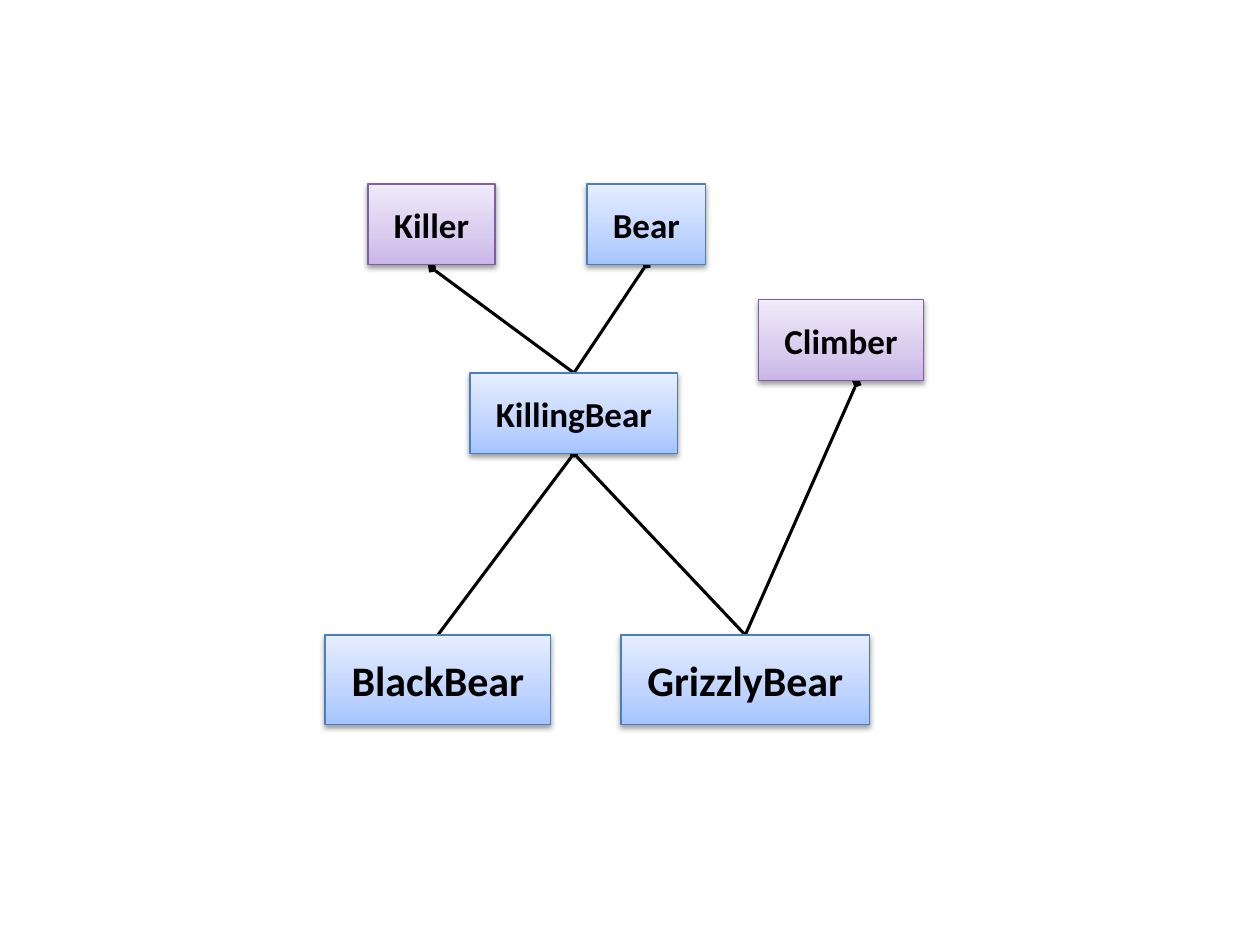
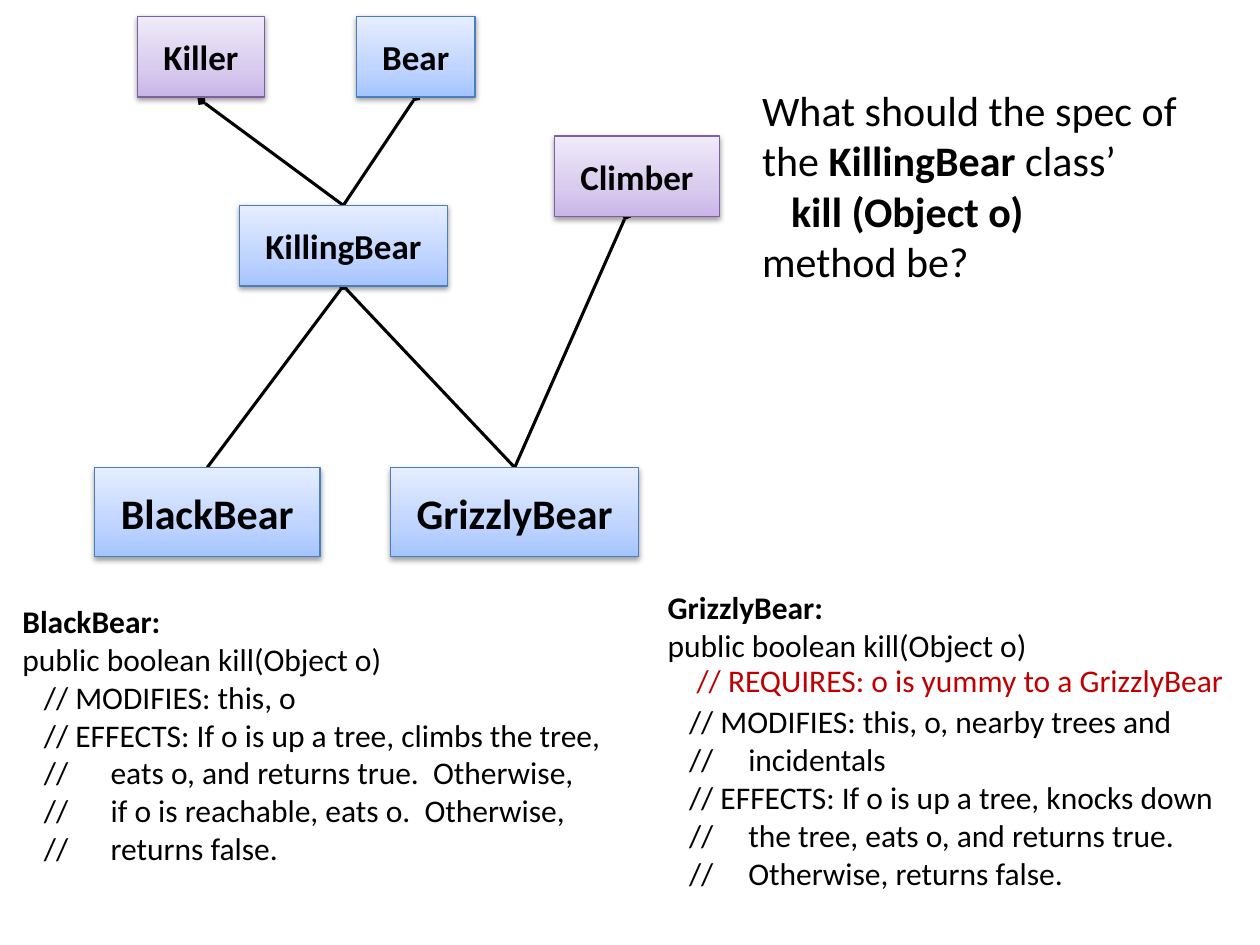
import pptx
import pptx.util
import pptx.dml.color
import pptx.enum.shapes
import pptx.enum.text
import pptx.oxml
import pptx.oxml.ns

HUES = {"ink": "000000", "alert": "C00000"}
# Line colour, then gradient stops from bottom to top
TINTS = {
    "class": ("4B7EBC", {0: "A4C4FF", 35: "BFD4FF", 100: "E6EEFF"}),
    "trait": ("7D60A0", {0: "C9B5E8", 35: "D8CBEE", 100: "F0EAF9"}),
}
FACE = "Calibri"
COLS, ROWS = 100, 75  # slide grid of square cells
CELL = pptx.util.Inches(0.1)
NS = pptx.oxml.ns.nsdecls("a")

# name: (left, top, width, height, tint, text size), in cells from the tree's corner
NODES = {
    "Killer": (3.4, 0, 10.1, 6.4, "trait", 20),
    "BlackBear": (0, 35.8, 17.9, 7.1, "class", 24),
    "GrizzlyBear": (23.5, 35.8, 19.7, 7.1, "class", 24),
    "Climber": (34.4, 9.2, 13.1, 6.4, "trait", 20),
    "Bear": (20.8, 0, 9.4, 6.4, "class", 20),
    "KillingBear": (11.5, 15, 16.5, 6.4, "class", 20),
}
LINKS = [
    ("Killer", "KillingBear"),
    ("KillingBear", "GrizzlyBear"),
    ("Climber", "GrizzlyBear"),
    ("KillingBear", "BlackBear"),
    ("Bear", "KillingBear"),
]
# Link starts that sit off the middle of a node's lower edge
FEET = {"Killer": (8.5, 6.7), "Climber": (42.2, 15.8)}


def cells(*nums):
    return [round(n * CELL) for n in nums]


def style(para, size, hue="ink", bold=None):
    font = para.font
    font.name, font.size, font.bold = FACE, pptx.util.Pt(size), bold
    font.color.rgb = pptx.dml.color.RGBColor.from_string(HUES[hue])


def link(slide, start, end):
    """Line with a diamond at its start."""
    kind = pptx.enum.shapes.MSO_CONNECTOR.STRAIGHT
    line = slide.shapes.add_connector(kind, *cells(*start, *end))
    line.line.width = pptx.util.Pt(1.75)
    line.line.color.rgb = pptx.dml.color.RGBColor.from_string(HUES["ink"])
    line.line._get_or_add_ln().append(
        pptx.oxml.parse_xml(f'<a:headEnd {NS} type="diamond"/>'))
    line._element.spPr.append(pptx.oxml.parse_xml(f"<a:effectLst {NS}/>"))


def node(slide, name, box, tint, size):
    """Shaded box with a type name."""
    kind = pptx.enum.shapes.MSO_SHAPE.RECTANGLE
    shape = slide.shapes.add_shape(kind, *cells(*box))
    edge, stops = TINTS[tint]
    shape.line.color.rgb = pptx.dml.color.RGBColor.from_string(edge)
    shape.line.width = pptx.util.Pt(0.75)

    # Gradient fill goes right after the geometry
    marks = "".join(f'<a:gs pos="{pos * 1000}"><a:srgbClr val="{hue}"/></a:gs>'
                    for pos, hue in stops.items())
    props = shape._element.spPr
    props.insert(2, pptx.oxml.parse_xml(
        f'<a:gradFill {NS} rotWithShape="1"><a:gsLst>{marks}</a:gsLst>'
        '<a:lin ang="16200000" scaled="0"/></a:gradFill>'))

    # Soft shadow below
    shape.shadow.inherit = False
    props.find(pptx.oxml.ns.qn("a:effectLst")).append(pptx.oxml.parse_xml(
        f'<a:outerShdw {NS} blurRad="40000" dist="20000" dir="5400000" rotWithShape="0">'
        f'<a:srgbClr val="{HUES["ink"]}"><a:alpha val="38000"/></a:srgbClr></a:outerShdw>'))

    frame = shape.text_frame
    frame.margin_left = frame.margin_right = pptx.util.Inches(0.2)
    frame.margin_top = frame.margin_bottom = pptx.util.Inches(0.15)
    frame.word_wrap = False
    frame.auto_size = pptx.enum.text.MSO_AUTO_SIZE.SHAPE_TO_FIT_TEXT
    para = frame.paragraphs[0]
    para.text = name
    para.alignment = pptx.enum.text.PP_ALIGN.CENTER
    style(para, size, bold=True)


def tree(slide, left, top, moved=None):
    """Class hierarchy with its corner at left, top."""
    nodes = {**NODES, **(moved or {})}
    for base, sub in LINKS:
        x, y, w, h = nodes[base][:4]
        fx, fy = FEET.get(base, (x + w / 2, y + h))
        x, y, w = nodes[sub][:3]
        link(slide, (left + fx, top + fy), (left + x + w / 2, top + y))
    for name, (x, y, w, h, tint, size) in nodes.items():
        node(slide, name, (left + x, top + y, w, h), tint, size)


def prose(slide, box, size, lines, hue="ink"):
    """Text box; lines are (text, indent, hang, space before), bold between bars."""
    frame = slide.shapes.add_textbox(*cells(*box)).text_frame
    frame.word_wrap = True
    frame.auto_size = pptx.enum.text.MSO_AUTO_SIZE.SHAPE_TO_FIT_TEXT
    for i, (text, indent, hang, gap) in enumerate(lines):
        para = frame.add_paragraph() if i else frame.paragraphs[0]
        parts = [(part, k % 2 == 1) for k, part in enumerate(text.split("|")) if part]
        mixed = len(parts) > 1
        style(para, size, hue, None if mixed else parts[0][1])
        para.space_before = pptx.util.Pt(gap)
        props = para._p.get_or_add_pPr()
        props.set("marL", str(cells(indent + hang)[0]))
        props.set("indent", str(-cells(hang)[0]))
        for part, bold in parts:
            run = para.add_run()
            run.text = part
            if mixed:
                run.font.bold = bold


def method(slide, box, name, notes, hang, gap=0):
    """Method header and its comment lines; a tab marks a continued line."""
    lines = [(f"|{name}:|", 0, 0, 0), ("public boolean kill(Object o)", 0, 0, 0)]
    for i, note in enumerate(notes):
        lines.append((f"//{note}", 1.7, hang if note[0] == "\t" else 0, 0 if i else gap))
    prose(slide, box, 18, lines)


def main():
    deck = pptx.Presentation()
    deck.slide_width, deck.slide_height = cells(COLS, ROWS)
    blank = deck.slide_layouts[6]

    # Hierarchy alone
    tree(deck.slides.add_slide(blank), 25.8, 14.6)

    # Hierarchy with question and method texts
    slide = deck.slides.add_slide(blank)
    tree(slide, 7.5, 1.3, {"Climber": (36.5, 9.5, *NODES["Climber"][2:])})
    prose(slide, (59.5, 6.2, 34.9, 17.2), 24, [
        ("What should the spec of the |KillingBear| class’", 0, 0, 0),
        ("|kill (Object o)|", 2.3, 0, 0),
        ("method be?", 0, 0, 0),
    ])
    method(slide, (52, 46.2, 47.1, 25.2), "GrizzlyBear", [
        " MODIFIES: this, o, nearby trees and",
        "\tincidentals",
        " EFFECTS: If o is up a tree, knocks down",
        "\tthe tree, eats o, and returns true.",
        "\tOtherwise, returns false.",
    ], 4.7, gap=22)
    prose(slide, (53.7, 52, 45.1, 4), 18,
          [("// REQUIRES: o is yummy to a GrizzlyBear", 0.6, 0, 0)], "alert")
    method(slide, (0.8, 47.3, 50.3, 22.2), "BlackBear", [
        " MODIFIES: this, o",
        " EFFECTS: If o is up a tree, climbs the tree,",
        "\teats o, and returns true.  Otherwise,",
        "\tif o is reachable, eats o.  Otherwise,",
        "\treturns false.",
    ], 5.3)
    deck.save("out.pptx")


if __name__ == "__main__":
    main()
